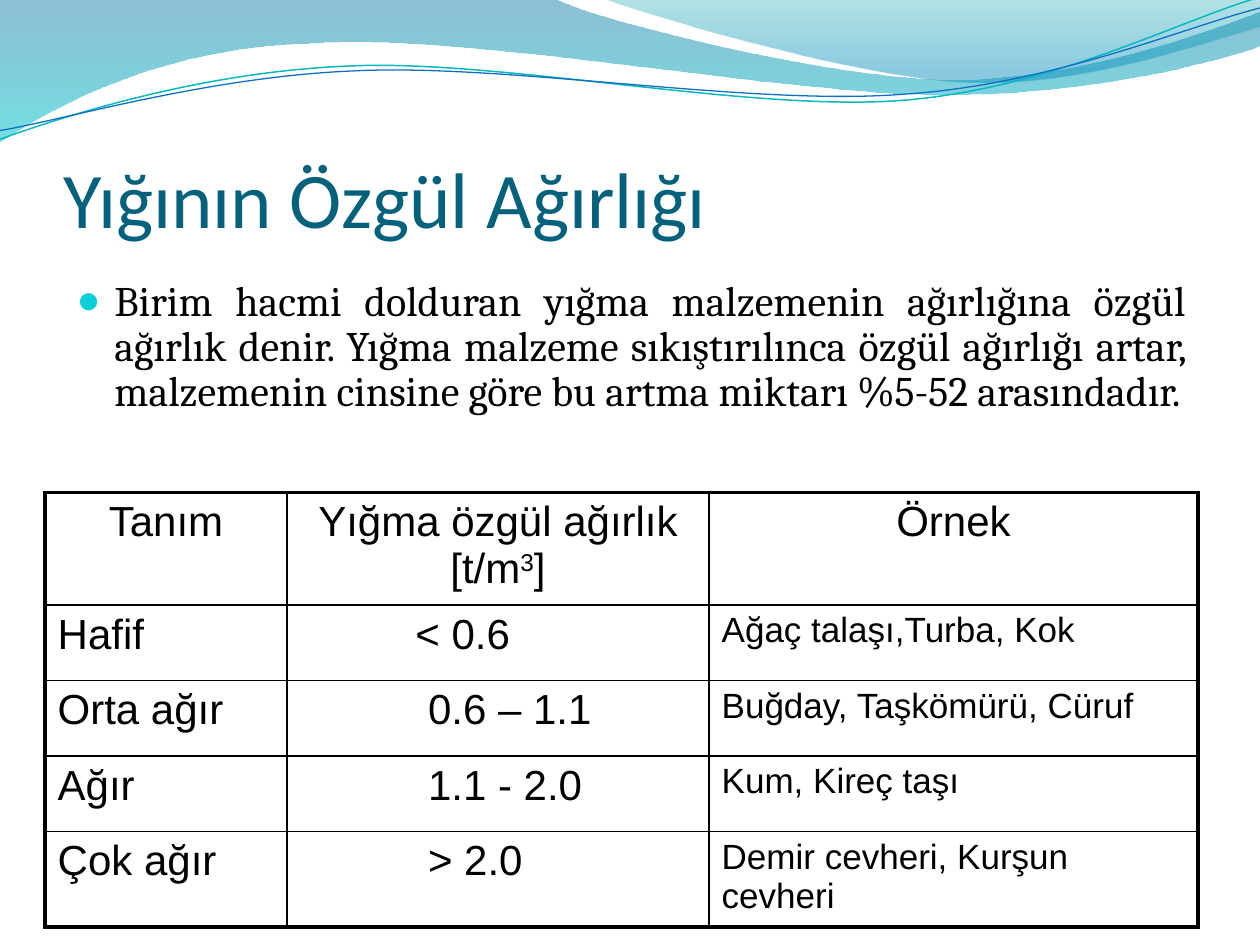
import dataclasses

import pptx
import pptx.dml.color
import pptx.enum.text
import pptx.oxml
import pptx.oxml.ns
import pptx.util

COLUMNS, ROWS = 100, 75
ALIGN = pptx.enum.text.PP_ALIGN


@dataclasses.dataclass(frozen=True)
class Theme:
    ink: str = "000000"
    title: str = "04617B"
    bullet: str = "0BD0D9"
    teal: str = "0AB8BF"
    blue: str = "0F6FC6"
    title_font: str = "Calibri"
    body_font: str = "Cambria"
    table_font: str = "Arial"
    title_size: int = 45
    body_size: int = 24
    example_size: int = 20
    frame_width: float = 2.25
    rule_width: float = 1


def color(value):
    return pptx.dml.color.RGBColor.from_string(value)


def element(xml):
    """Parse a fragment whose root tag carries the a: prefix."""
    tag_end = min(xml.index(mark) for mark in " />" if mark in xml)
    return pptx.oxml.parse_xml(xml[:tag_end] + " " + pptx.oxml.ns.nsdecls("a") + xml[tag_end:])


class SlideBuilder:
    def __init__(self, presentation, theme):
        self.theme = theme
        self.column = presentation.slide_width / COLUMNS
        self.row = presentation.slide_height / ROWS
        self.slide = presentation.slides.add_slide(presentation.slide_layouts[6])

    def box(self, left, top, width, height):
        return (round(left * self.column), round(top * self.row),
                round(width * self.column), round(height * self.row))

    def style(self, paragraph, font, size, ink, alignment=ALIGN.LEFT):
        paragraph.alignment = alignment
        paragraph.font.name = font
        paragraph.font.size = pptx.util.Pt(size)
        paragraph.font.color.rgb = color(ink)

    def outline(self, segments, close):
        """Draw segments: one point is a line, three (two handles and an end) a curve."""
        points = [(x * self.column, y * self.row) for segment in segments for x, y in segment]
        builder = self.slide.shapes.build_freeform(*points[0])
        builder.add_line_segments(points[1:], close=close)
        shape = builder.convert_to_shape()
        shape.shadow.inherit = False
        lines = list(shape.element.iter(pptx.oxml.ns.qn("a:lnTo")))
        for segment in segments[1:]:
            members, lines = lines[:len(segment)], lines[len(segment):]
            if len(segment) == 3:
                curve = element("<a:cubicBezTo/>")
                members[0].addprevious(curve)
                for line in members:
                    curve.append(line[0])
                    line.getparent().remove(line)
        return shape

    def wave(self, segments, stops):
        """Filled wave; stops are (position, colour, opacity) from top to bottom."""
        shape = self.outline(segments, True)
        shape.line.fill.background()
        marks = "".join(
            f'<a:gs pos="{position * 1000}"><a:srgbClr val="{value}">'
            f'<a:alpha val="{opacity * 1000}"/></a:srgbClr></a:gs>'
            for position, value, opacity in stops)
        shape.fill.background()
        properties = shape.element.spPr
        gradient = element(f'<a:gradFill><a:gsLst>{marks}</a:gsLst><a:lin ang="5400000" scaled="0"/></a:gradFill>')
        properties.replace(properties.find(pptx.oxml.ns.qn("a:noFill")), gradient)

    def strand(self, segments, ink, width):
        shape = self.outline(segments, False)
        shape.rotation = 357.3
        shape.fill.background()
        shape.line.color.rgb = color(ink)
        shape.line.width = pptx.util.Pt(width)

    def text_box(self, *place):
        frame = self.slide.shapes.add_textbox(*self.box(*place)).text_frame
        frame.word_wrap = True
        return frame

    def title(self, text, *place):
        frame = self.text_box(*place)
        frame.vertical_anchor = pptx.enum.text.MSO_ANCHOR.BOTTOM
        frame.margin_left = frame.margin_right = frame.margin_bottom = 0
        paragraph = frame.paragraphs[0]
        paragraph.text = text
        self.style(paragraph, self.theme.title_font, self.theme.title_size, self.theme.title)

    def bullet(self, text, top_margin, *place):
        frame = self.text_box(*place)
        frame.margin_top = round(top_margin * self.row)
        paragraph = frame.paragraphs[0]
        paragraph.text = text
        paragraph.line_spacing = 0.9
        properties = paragraph._p.get_or_add_pPr()
        indent = pptx.util.Inches(0.3)
        properties.set("marL", str(indent))
        properties.set("indent", str(-indent))
        for xml in (f'<a:buClr><a:srgbClr val="{self.theme.bullet}"/></a:buClr>',
                    '<a:buSzPct val="95000"/>',
                    f'<a:buFont typeface="{self.theme.table_font}"/>',
                    '<a:buChar char="●"/>'):
            properties.append(element(xml))
        self.style(paragraph, self.theme.body_font, self.theme.body_size, self.theme.ink, ALIGN.JUSTIFY)

    def borders(self, cell, outer_sides):
        properties = cell._tc.get_or_add_tcPr()
        for index, side in enumerate("LRTB"):
            points = self.theme.frame_width if side in outer_sides else self.theme.rule_width
            properties.insert(index, element(
                f'<a:ln{side} w="{pptx.util.Pt(points)}"><a:solidFill>'
                f'<a:srgbClr val="{self.theme.ink}"/></a:solidFill></a:ln{side}>'))

    def table(self, records, left, top, widths, heights, value_indents):
        """Framed table; the middle column of each body row has its own indent."""
        table = self.slide.shapes.add_table(
            len(heights), len(widths), *self.box(left, top, sum(widths), sum(heights))).table
        table.first_row = table.horz_banding = False
        for column, width in zip(table.columns, widths):
            column.width = round(width * self.column)
        for row, height in zip(table.rows, heights):
            row.height = round(height * self.row)
        last_row, last_column = len(heights) - 1, len(widths) - 1
        for r, record in enumerate(records):
            for c, content in enumerate(record):
                cell = table.cell(r, c)
                cell.margin_bottom = pptx.util.Inches(0.04)
                paragraph = cell.text_frame.paragraphs[0]
                example = r > 0 and c == last_column
                self.style(paragraph, self.theme.table_font,
                           self.theme.example_size if example else self.theme.body_size,
                           self.theme.ink, ALIGN.LEFT if r else ALIGN.CENTER)
                for index, part in enumerate(content.split("^")):
                    run = paragraph.add_run()
                    run.text = part
                    if index == 1:
                        run.font._element.set("baseline", "30000")
                if r and c == 1:
                    cell.margin_left = round(value_indents[r - 1] * self.column)
                cell.fill.background()
                edges = (("L", c == 0), ("R", c == last_column), ("T", r == 0), ("B", r == last_row))
                self.borders(cell, [side for side, outer in edges if outer])


def main():
    presentation = pptx.Presentation()
    presentation.slide_width = pptx.util.Inches(10)
    presentation.slide_height = pptx.util.Inches(7.5)
    theme = Theme()
    slide = SlideBuilder(presentation, theme)

    slide.wave([[(0, 0)], [(44, -0.1)],
                [(47.6, 1.7), (66.4, 6.3), (75.8, 6.3)], [(85.3, 6.3), (95.8, 2.6), (100, 0.9)],
                [(100.1, 3.6)],
                [(98.3, 4.4), (87, 7.6), (74.6, 7.5)], [(62.2, 7.5), (38.2, 2.8), (25.7, 3.4)],
                [(12.9, 3.6), (4.6, 8.3), (-0.1, 11.3)]],
               [(0, "0074A1", 45), (100, "00C6CF", 55)])
    slide.wave([[(47.9, -0.1)],
                [(50.9, 1.1), (68.2, 6.2), (76.9, 6.5)], [(85.6, 6.9), (96.1, 3.2), (100, 2.1)],
                [(100, 0)]],
               [(0, "00A1A9", 30), (80, "008BBF", 45)])
    slide.strand([[(-0.2, 8.7)],
                  [(4.7, 7.2), (15.8, 4.1), (27.8, 4.2)], [(39.6, 4.2), (59.1, 9.3), (71.2, 9)],
                  [(83.2, 8.7), (94, 3.6), (100, 2.2)]], theme.teal, 0.85)
    slide.strand([[(-0.2, 8)],
                  [(4.6, 7.5), (16.4, 4.5), (28.3, 4.6)], [(40.4, 4.6), (59.6, 8.9), (71.6, 8.5)],
                  [(83.5, 8.3), (94.2, 4.2), (100.2, 3)]], theme.blue, 0.75)

    slide.bullet("Birim hacmi dolduran yığma malzemenin ağırlığına özgül ağırlık denir. "
                 "Yığma malzeme sıkıştırılınca özgül ağırlığı artar, malzemenin cinsine göre "
                 "bu artma miktarı %5-52 arasındadır.", 5.2, 5.1, 17, 90, 20.5)
    slide.table([("Tanım", "Yığma özgül ağırlık [t/m^3^]", "Örnek"),
                 ("Hafif", "< 0.6", "Ağaç talaşı,Turba, Kok"),
                 ("Orta ağır", "0.6 – 1.1", "Buğday, Taşkömürü, Cüruf"),
                 ("Ağır", "1.1 - 2.0", "Kum, Kireç taşı"),
                 ("Çok ağır", "> 2.0", "Demir cevheri, Kurşun cevheri")],
                3.58, 39.1, (19.2, 33.5, 38.8), (8.6, 6, 6, 6, 7.3), (10.2, 11.2, 11.2, 11.2))
    slide.title("Yığının Özgül Ağırlığı", 5.05, 7.7, 88.3, 11.7)
    presentation.save("out.pptx")


if __name__ == "__main__":
    main()
